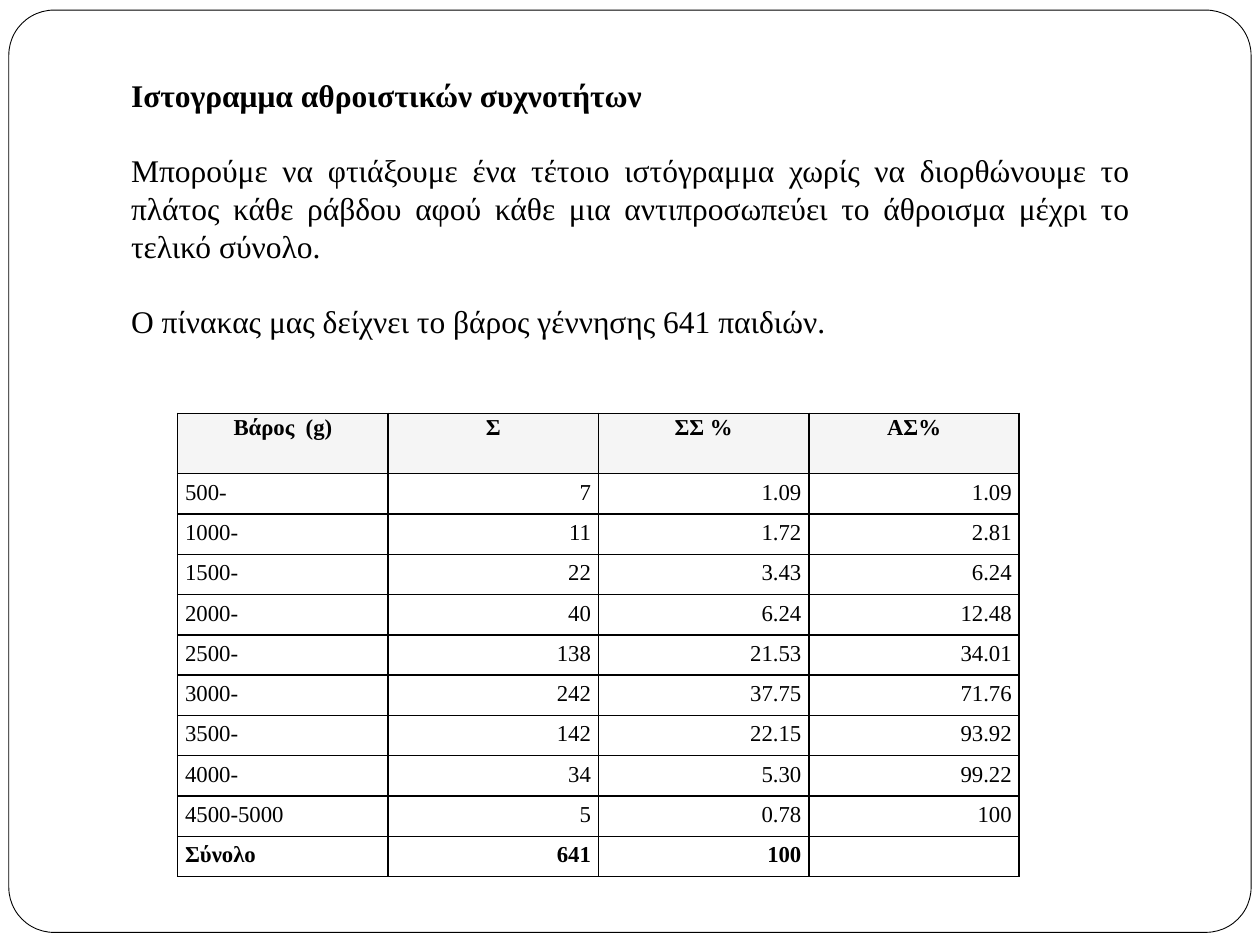
from lxml import etree
from pptx import Presentation
from pptx.dml.color import RGBColor
from pptx.enum.shapes import MSO_SHAPE
from pptx.enum.text import MSO_ANCHOR, MSO_AUTO_SIZE, PP_ALIGN
from pptx.oxml.ns import qn
from pptx.util import Inches, Pt

LEFT, CENTER, RIGHT, JUSTIFY = PP_ALIGN.LEFT, PP_ALIGN.CENTER, PP_ALIGN.RIGHT, PP_ALIGN.JUSTIFY
TOP, NO_FIT = MSO_ANCHOR.TOP, MSO_AUTO_SIZE.NONE
ROUNDED = MSO_SHAPE.ROUNDED_RECTANGLE

FONT = "Times New Roman"
COLORS = {"ink": "000000", "paper": "FFFFFF", "header": "F5F5F5"}

TITLE = "Ιστογραμμα αθροιστικών συχνοτήτων"
BODY = [
    "Μπορούμε να φτιάξουμε ένα τέτοιο ιστόγραμμα χωρίς να διορθώνουμε το πλάτος "
    "κάθε ράβδου αφού κάθε μια αντιπροσωπεύει το άθροισμα μέχρι το τελικό σύνολο.",
    "Ο πίνακας μας δείχνει το βάρος γέννησης 641 παιδιών.",
]
ROWS = [
    ("Bάρος  (g)", "Σ", "ΣΣ %", "ΑΣ%"),
    ("500-", "7", "1.09", "1.09"),
    ("1000-", "11", "1.72", "2.81"),
    ("1500-", "22", "3.43", "6.24"),
    ("2000-", "40", "6.24", "12.48"),
    ("2500-", "138", "21.53", "34.01"),
    ("3000-", "242", "37.75", "71.76"),
    ("3500-", "142", "22.15", "93.92"),
    ("4000-", "34", "5.30", "99.22"),
    ("4500-5000", "5", "0.78", "100"),
    ("Σύνολο", "641", "100", ""),
]
COLUMN_WIDTH, HEADER_HEIGHT, ROW_HEIGHT = 1.67, 0.48, 0.32


def color(name):
    return RGBColor.from_string(COLORS[name])


def write(para, text, size=18, bold=False, align=JUSTIFY, before=0):
    para.alignment = align
    para.space_before = Pt(before)
    para.space_after = Pt(0)
    para.line_spacing = 1.0
    if not text:
        etree.SubElement(para._p, qn("a:endParaRPr"), sz=str(size * 100))
        return
    span = para.add_run()
    span.text = text
    span.font.name = FONT
    span.font.size = Pt(size)
    span.font.bold = bold
    span.font.color.rgb = color("ink")


def place(box, left, top, width, height):
    box.left, box.top = Inches(left), Inches(top)
    box.width, box.height = Inches(width), Inches(height)
    box.text_frame.word_wrap = True
    box.text_frame.auto_size = NO_FIT
    box.text_frame.vertical_anchor = TOP


def remove_bullet(para):
    properties = para._p.get_or_add_pPr()
    properties.set("marL", "0")
    properties.set("indent", "0")
    etree.SubElement(properties, qn("a:buNone"))


def add_borders(cell):
    properties = cell._tc.get_or_add_tcPr()
    for index, side in enumerate(("lnL", "lnR", "lnT", "lnB")):
        line = etree.Element(qn(f"a:{side}"), w=str(Pt(1)))
        fill = etree.SubElement(line, qn("a:solidFill"))
        etree.SubElement(fill, qn("a:srgbClr"), val=COLORS["ink"])
        properties.insert(index, line)


def add_frame(slide):
    frame = slide.shapes.add_shape(ROUNDED, Inches(0.07), Inches(0.08), Inches(9.86), Inches(7.32))
    frame.adjustments[0] = 0.049
    frame.shadow.inherit = False
    frame.fill.solid()
    frame.fill.fore_color.rgb = color("paper")
    frame.line.color.rgb = color("ink")
    frame.line.width = Pt(0.5)
    slide.shapes._spTree.insert(2, frame._element)


def add_text(slide):
    title, body = slide.shapes.title, slide.placeholders[1]
    place(title, 0.94, 0.55, 8.13, 0.42)
    write(title.text_frame.paragraphs[0], TITLE, bold=True)
    place(body, 0.94, 1.15, 8.13, 1.92)
    for index, text in enumerate(BODY):
        para = body.text_frame.add_paragraph() if index else body.text_frame.paragraphs[0]
        write(para, text, before=21.6 if index else 0)
        remove_bullet(para)


def add_weights(slide):
    columns, last = len(ROWS[0]), len(ROWS) - 1
    height = HEADER_HEIGHT + ROW_HEIGHT * last
    table = slide.shapes.add_table(
        len(ROWS), columns, Inches(1.41), Inches(3.28), Inches(COLUMN_WIDTH * columns), Inches(height)
    ).table
    for column in table.columns:
        column.width = Inches(COLUMN_WIDTH)
    for r, values in enumerate(ROWS):
        header = r == 0
        table.rows[r].height = Inches(HEADER_HEIGHT if header else ROW_HEIGHT)
        for c, text in enumerate(values):
            cell = table.cell(r, c)
            cell.margin_left = cell.margin_right = Inches(0.02 if header else 0.06)
            cell.margin_top = cell.margin_bottom = Inches(0.02 if header else 0.05)
            cell.fill.solid()
            cell.fill.fore_color.rgb = color("header" if header else "paper")
            add_borders(cell)
            align = CENTER if header else RIGHT if c else LEFT
            write(cell.text_frame.paragraphs[0], text, size=13, bold=r in (0, last), align=align)


def main():
    deck = Presentation()
    deck.slide_width, deck.slide_height = Inches(10), Inches(7.5)
    slide = deck.slides.add_slide(deck.slide_layouts[1])
    add_frame(slide)
    add_text(slide)
    add_weights(slide)
    deck.save("out.pptx")


if __name__ == "__main__":
    main()
